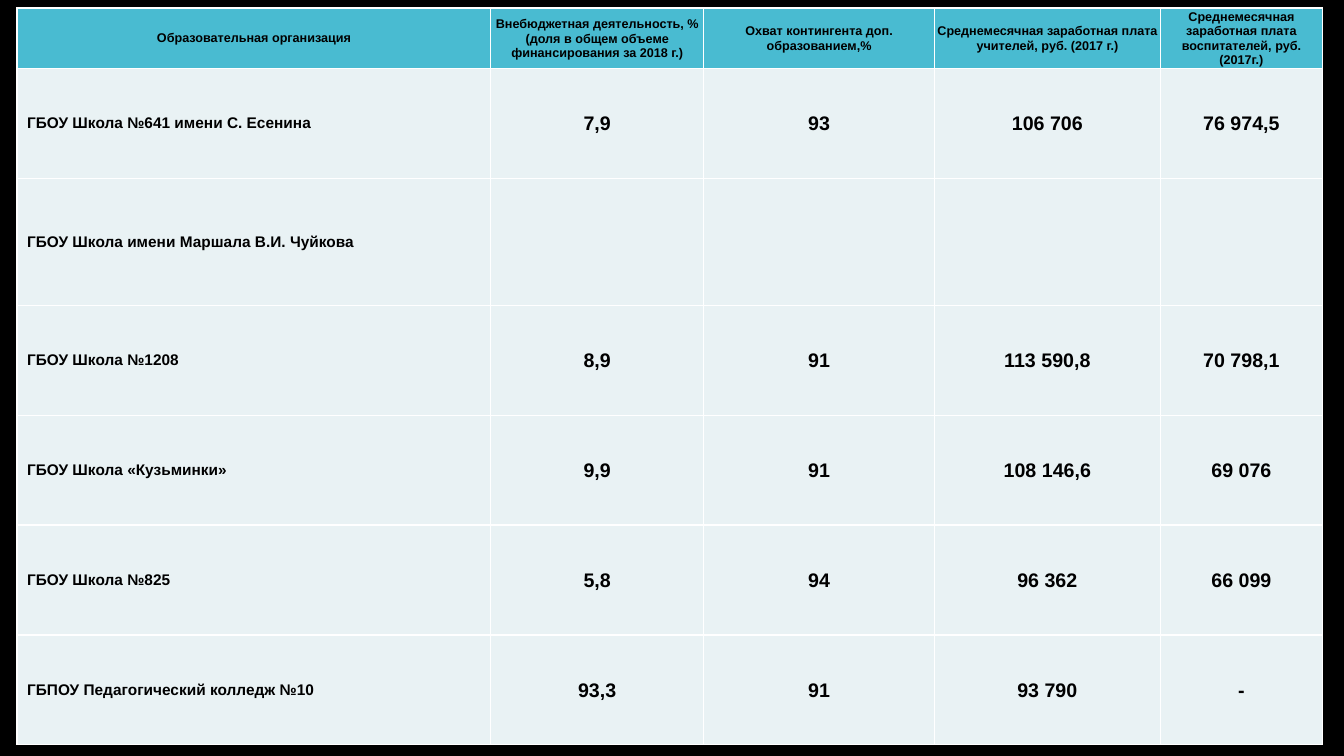
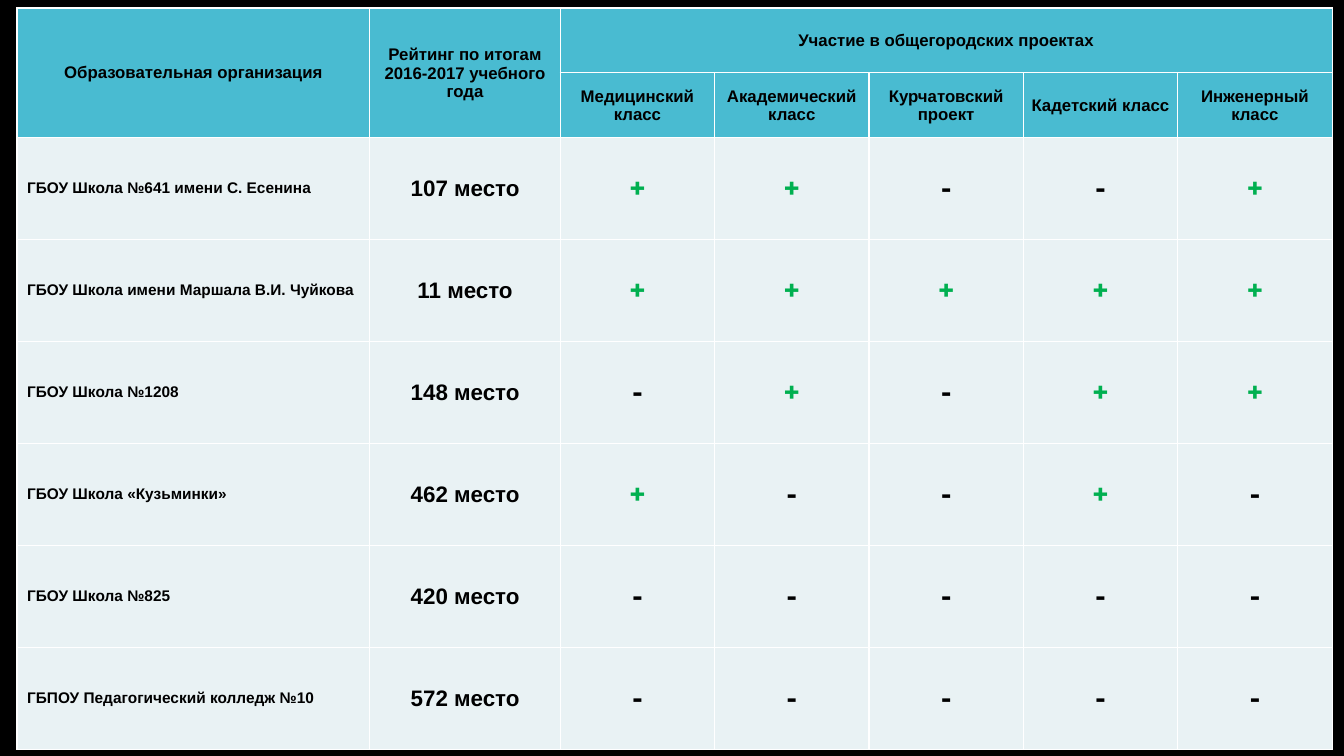
from dataclasses import dataclass

from lxml.etree import SubElement
from pptx import Presentation
from pptx.dml.color import RGBColor
from pptx.enum.text import MSO_ANCHOR, PP_ALIGN
from pptx.oxml.ns import qn
from pptx.util import Cm, Pt

SCHOOLS = [
    "ГБОУ Школа №641 имени С. Есенина",
    "ГБОУ Школа имени Маршала В.И. Чуйкова",
    "ГБОУ Школа №1208",
    "ГБОУ Школа «Кузьминки»",
    "ГБОУ Школа №825",
    "ГБПОУ Педагогический колледж №10",
]
FINANCE_HEADER = [
    "Образовательная организация",
    "Внебюджетная деятельность, % (доля в общем объеме финансирования за 2018 г.)",
    "Охват контингента доп. образованием,%",
    "Среднемесячная заработная плата учителей, руб. (2017 г.)",
    "Среднемесячная заработная плата воспитателей, руб. (2017г.)",
]
FINANCE = [
    ("7,9", "93", "106 706", "76 974,5"),
    ("", "", "", ""),
    ("8,9", "91", "113 590,8", "70 798,1"),
    ("9,9", "91", "108 146,6", "69 076"),
    ("5,8", "94", "96 362", "66 099"),
    ("93,3", "91", "93 790", "-"),
]
PROJECTS = ["Медицинский класс", "Академический класс", "Курчатовский проект",
            "Кадетский класс", "Инженерный класс"]
PROJECTS_HEADER = ["Образовательная организация",
                   "Рейтинг по итогам 2016-2017 учебного года",
                   "Участие в общегородских проектах"]
RATINGS = [
    ("107 место", "++--+"),
    ("11 место", "+++++"),
    ("148 место", "-+-++"),
    ("462 место", "+--+-"),
    ("420 место", "-----"),
    ("572 место", "-----"),
]


@dataclass(frozen=True)
class Theme:
    background: str = "000000"
    header: str = "49BBD1"
    body: str = "E9F2F4"
    border: str = "FFFFFF"
    text: str = "000000"
    plus: str = "00B050"
    font: str = "Arial"
    mark_font: str = "Montserrat"
    small_header: int = 9
    large_header: int = 12
    school: int = 11
    figure: int = 14
    rating: int = 16
    mark: int = 20


THEME = Theme()
LEFT, TOP = 0.43, 0.2
INSET = Cm(0.03)


def add_borders(cell):
    properties = cell._tc.get_or_add_tcPr()
    for side in ("a:lnL", "a:lnR", "a:lnT", "a:lnB"):
        line = SubElement(properties, qn(side), w=str(Pt(1)))
        fill = SubElement(line, qn("a:solidFill"))
        SubElement(fill, qn("a:srgbClr"), val=THEME.border)


def add_table_slide(deck, widths, heights, header_rows):
    """Add a slide filled by an empty table with bordered, coloured cells."""
    page = deck.slides.add_slide(deck.slide_layouts[6])
    page.background.fill.solid()
    page.background.fill.fore_color.rgb = RGBColor.from_string(THEME.background)
    table = page.shapes.add_table(
        len(heights), len(widths), Cm(LEFT), Cm(TOP),
        Cm(sum(widths)), Cm(sum(heights))).table
    table.first_row = table.horz_banding = False
    for column, width in zip(table.columns, widths):
        column.width = Cm(width)
    for index, (row, height) in enumerate(zip(table.rows, heights)):
        row.height = Cm(height)
        colour = THEME.header if index < header_rows else THEME.body
        for cell in row.cells:
            add_borders(cell)
            cell.fill.solid()
            cell.fill.fore_color.rgb = RGBColor.from_string(colour)
    return table


def write(cell, text, size, color=THEME.text, font=THEME.font,
          align=PP_ALIGN.CENTER, tight=True):
    cell.vertical_anchor = MSO_ANCHOR.MIDDLE
    if tight:
        cell.margin_left = cell.margin_right = cell.margin_top = INSET
        cell.margin_bottom = 0
    para = cell.text_frame.paragraphs[0]
    para.text = text
    para.alignment = align
    para.font.size = Pt(size)
    for span in para.runs:
        span.font.size = Pt(size)
        span.font.name = font
        span.font.bold = True
        span.font.color.rgb = RGBColor.from_string(color)


def write_header(table, titles, size):
    for column, title in enumerate(titles):
        write(table.cell(0, column), title, size, tight=column > 0)


def write_schools(table, first_row):
    for row, school in enumerate(SCHOOLS, first_row):
        write(table.cell(row, 0), school, THEME.school,
              align=PP_ALIGN.LEFT, tight=False)


def add_finance_slide(deck):
    heights = [1.52, 2.77, 3.2] + [2.77] * 4
    table = add_table_slide(deck, [11.94, 5.36, 5.82, 5.69, 4.09], heights, 1)
    write_header(table, FINANCE_HEADER, THEME.small_header)
    write_schools(table, 1)
    for row, figures in enumerate(FINANCE, 1):
        for column, figure in enumerate(figures, 1):
            write(table.cell(row, column), figure, THEME.figure)


def add_projects_slide(deck):
    widths = [8.89, 4.8] + [3.89] * len(PROJECTS)
    heights = [1.63] * 2 + [2.57] * len(SCHOOLS)
    table = add_table_slide(deck, widths, heights, 2)
    for column in (0, 1):
        table.cell(0, column).merge(table.cell(1, column))
    table.cell(0, 2).merge(table.cell(0, len(widths) - 1))
    write_header(table, PROJECTS_HEADER, THEME.large_header)
    for column, project in enumerate(PROJECTS, 2):
        write(table.cell(1, column), project, THEME.large_header)
    write_schools(table, 2)
    for row, (rating, marks) in enumerate(RATINGS, 2):
        write(table.cell(row, 1), rating, THEME.rating)
        for column, mark in enumerate(marks, 2):
            color = THEME.plus if mark == "+" else THEME.text
            write(table.cell(row, column), mark, THEME.mark, color, THEME.mark_font)


def main():
    deck = Presentation()
    deck.slide_width, deck.slide_height = Cm(33.87), Cm(19.05)
    add_finance_slide(deck)
    add_projects_slide(deck)
    deck.save("out.pptx")


if __name__ == "__main__":
    main()
